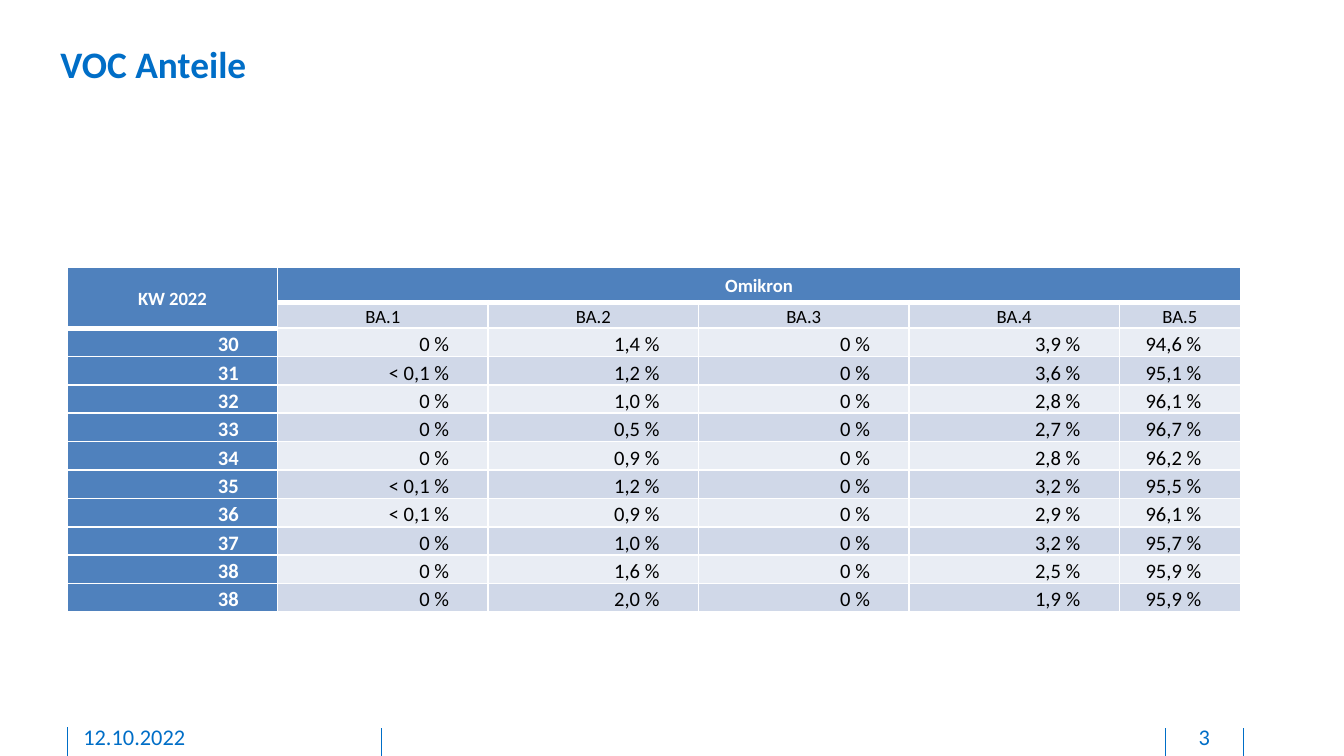
from dataclasses import dataclass

import lxml.etree
import pptx
import pptx.dml.color
import pptx.enum.shapes
import pptx.enum.text
import pptx.oxml.ns
import pptx.util

Inches = pptx.util.Inches
Pt = pptx.util.Pt
Align = pptx.enum.text.PP_ALIGN
Anchor = pptx.enum.text.MSO_ANCHOR
qn = pptx.oxml.ns.qn


@dataclass(frozen=True)
class Theme:
    font: str = "Calibri"
    blue: str = "006EC7"
    head: str = "4F81BD"
    dark: str = "D0D8E8"
    light: str = "E9EDF4"
    white: str = "FFFFFF"
    black: str = "000000"
    title: int = 20
    foot: int = 12
    label: int = 10
    value: int = 11


@dataclass(frozen=True)
class Rule:
    x: float
    top: float
    end: float


@dataclass(frozen=True)
class Note:
    text: str
    x: float
    width: float
    align: Align


@dataclass(frozen=True)
class Look:
    fill: str
    color: str
    size: int
    bold: bool = False
    align: Align = Align.CENTER
    anchor: Anchor = Anchor.TOP
    right: float = 0.05
    after: int = 0
    base: int = 1  # width of the bottom border in points


THEME = Theme()
RULES = [Rule(8.67, 5.42, 5.65), Rule(2.84, 5.42, 5.64),
         Rule(0.5, 5.41, 5.63), Rule(9.25, 5.42, 5.65)]
NOTES = [Note("12.10.2022", 0.62, 2.03, Align.LEFT),
         Note("3", 8.69, 0.54, Align.CENTER)]
WIDTH, LAST = 8.73, 0.9
WIDTHS = [(WIDTH - LAST) / 5] * 5 + [LAST]
HEIGHTS = [0.26, 0.18] + [0.2] * 10
TYPES = ["BA.1", "BA.2", "BA.3", "BA.4", "BA.5"]
WEEKS = [
    ("30", "0 %", "1,4 %", "0 %", "3,9 %", "94,6 %"),
    ("31", "< 0,1 %", "1,2 %", "0 %", "3,6 %", "95,1 %"),
    ("32", "0 %", "1,0 %", "0 %", "2,8 %", "96,1 %"),
    ("33", "0 %", "0,5 %", "0 %", "2,7 %", "96,7 %"),
    ("34", "0 %", "0,9 %", "0 %", "2,8 %", "96,2 %"),
    ("35", "< 0,1 %", "1,2 %", "0 %", "3,2 %", "95,5 %"),
    ("36", "< 0,1 %", "0,9 %", "0 %", "2,9 %", "96,1 %"),
    ("37", "0 %", "1,0 %", "0 %", "3,2 %", "95,7 %"),
    ("38", "0 %", "1,6 %", "0 %", "2,5 %", "95,9 %"),
    ("38", "0 %", "2,0 %", "0 %", "1,9 %", "95,9 %"),
]


def rgb(code: str) -> pptx.dml.color.RGBColor:
    return pptx.dml.color.RGBColor.from_string(code)


def write(frame, text: str, size: int, color: str, bold: bool, align: Align):
    para = frame.paragraphs[0]
    para.text = text
    para.alignment = align
    para.font.name = THEME.font
    para.font.size = Pt(size)
    para.font.bold = bold
    para.font.color.rgb = rgb(color)
    return para


def draw_rule(slide, rule: Rule) -> None:
    line = slide.shapes.add_connector(
        pptx.enum.shapes.MSO_CONNECTOR.STRAIGHT,
        Inches(rule.x), Inches(rule.top), Inches(rule.x), Inches(rule.end))
    line.line.color.rgb = rgb(THEME.blue)
    line.line.width = Pt(0.5)
    lxml.etree.SubElement(line._element.spPr, qn("a:effectLst"))


def draw_note(slide, note: Note) -> None:
    box = slide.shapes.add_textbox(
        Inches(note.x), Inches(5.38), Inches(note.width), Inches(0.21))
    frame = box.text_frame
    frame.word_wrap = True
    frame.margin_left = frame.margin_right = frame.margin_top = 0
    frame.margin_bottom = Inches(0.05)
    write(frame, note.text, THEME.foot, THEME.blue, False, note.align)


def draw_title(slide, text: str) -> None:
    title = slide.shapes.title
    title.left, title.top = Inches(0.35), Inches(0.26)
    title.width, title.height = Inches(1.66), Inches(0.44)
    frame = title.text_frame
    frame.word_wrap = False
    frame.auto_size = pptx.enum.text.MSO_AUTO_SIZE.SHAPE_TO_FIT_TEXT
    frame.vertical_anchor = Anchor.TOP
    write(frame, text, THEME.title, THEME.blue, True, Align.LEFT)


def style_cell(cell, text: str, look: Look) -> None:
    cell.margin_left, cell.margin_right = Inches(0.05), Inches(look.right)
    cell.margin_top = cell.margin_bottom = 0
    cell.vertical_anchor = look.anchor
    cell.fill.solid()
    cell.fill.fore_color.rgb = rgb(look.fill)
    para = write(cell.text_frame, text, look.size, look.color,
                 look.bold, look.align)
    para.line_spacing = 1.15
    para.space_after = Pt(look.after)
    # Borders come before the fill in the cell properties
    props = cell._tc.get_or_add_tcPr()
    for spot, side in enumerate(("lnL", "lnR", "lnT", "lnB")):
        width = look.base if side == "lnB" else 1
        edge = lxml.etree.Element(qn(f"a:{side}"), w=str(Pt(width)))
        fill = lxml.etree.SubElement(edge, qn("a:solidFill"))
        lxml.etree.SubElement(fill, qn("a:srgbClr"), val=THEME.white)
        props.insert(spot, edge)


def draw_table(slide) -> None:
    table = slide.shapes.add_table(
        len(HEIGHTS), len(WIDTHS), Inches(0.5), Inches(1.99),
        Inches(WIDTH), Inches(sum(HEIGHTS))).table
    table.first_row = table.horz_banding = False
    for col, width in zip(table.columns, WIDTHS):
        col.width = Inches(width)
    for row, height in zip(table.rows, HEIGHTS):
        row.height = Inches(height)

    # Two header rows
    head = Look(THEME.head, THEME.white, THEME.label, bold=True,
                anchor=Anchor.MIDDLE, base=3)
    for col in range(len(WIDTHS)):
        text = {0: "KW 2022", 1: "Omikron"}.get(col, "")
        style_cell(table.cell(0, col), text, head)
    style_cell(table.cell(1, 0), "", head)
    for col, text in enumerate(TYPES, 1):
        anchor = Anchor.MIDDLE if col < 3 else Anchor.TOP
        style_cell(table.cell(1, col), text,
                   Look(THEME.dark, THEME.black, THEME.label, anchor=anchor))
    table.cell(0, 0).merge(table.cell(1, 0))
    table.cell(0, 1).merge(table.cell(0, len(TYPES)))

    # One banded row per week
    for row, week in enumerate(WEEKS, 2):
        band = THEME.dark if row % 2 else THEME.light
        for col, text in enumerate(week):
            first = col == 0
            look = Look(THEME.head if first else band,
                        THEME.white if first else THEME.black,
                        THEME.value, bold=first, align=Align.RIGHT,
                        anchor=Anchor.BOTTOM if col in (2, 4, 5) else Anchor.TOP,
                        right=0.29, after=6)
            style_cell(table.cell(row, col), text, look)


def main() -> None:
    deck = pptx.Presentation()
    # Widescreen, 16 to 9
    deck.slide_width = Inches(10)
    deck.slide_height = deck.slide_width * 9 // 16
    slide = deck.slides.add_slide(deck.slide_layouts[5])
    # Footer marks and texts
    for rule in RULES:
        draw_rule(slide, rule)
    draw_title(slide, "VOC Anteile")
    for note in NOTES:
        draw_note(slide, note)
    draw_table(slide)
    deck.save("out.pptx")


if __name__ == "__main__":
    main()
